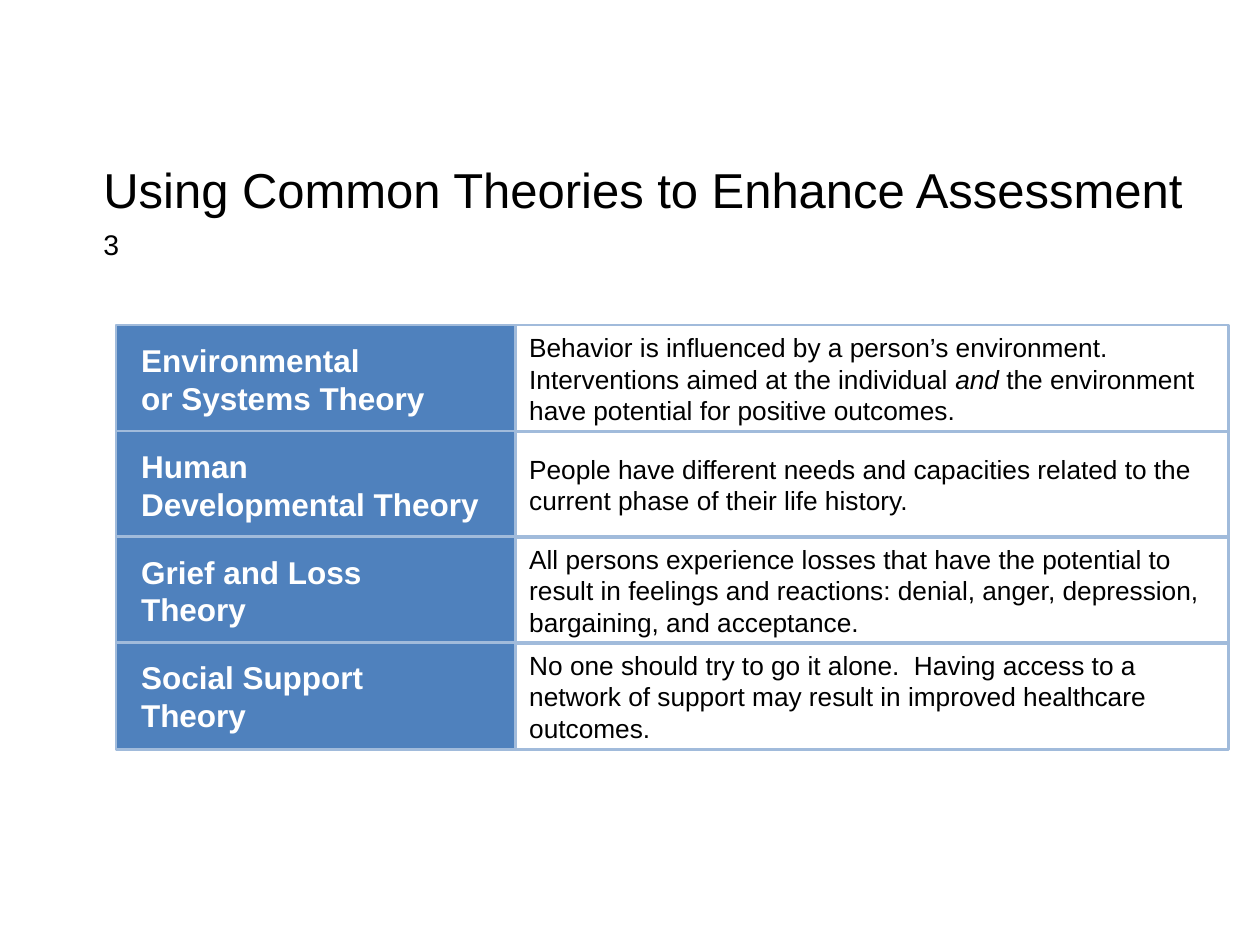
"""Build a slide that pairs four common theories with their meaning for assessment."""
from pptx import Presentation
from pptx.dml.color import RGBColor
from pptx.enum.shapes import MSO_SHAPE
from pptx.enum.text import MSO_ANCHOR, MSO_AUTO_SIZE, PP_ALIGN
from pptx.util import Inches, Pt

RECTANGLE = MSO_SHAPE.RECTANGLE
TOP, MIDDLE = MSO_ANCHOR.TOP, MSO_ANCHOR.MIDDLE
LEFT = PP_ALIGN.LEFT
NO_AUTOFIT = MSO_AUTO_SIZE.NONE
TITLE_ONLY = 5
FIRST_TOP, ROW_PITCH, ROW_HEIGHT = 2.58, 0.84, 0.85

THEORIES = [
    (["Environmental", "or Systems Theory"],
     ["Behavior is influenced by a person’s environment.  Interventions aimed at the individual ",
      "and", " the environment have potential for positive outcomes."]),
    (["Human", "Developmental Theory"],
     ["People have different needs and capacities related to the current phase of their life history."]),
    (["Grief and Loss", "Theory"],
     ["All persons experience losses that have the potential to result in feelings and reactions: "
      "denial, anger, depression, bargaining, and acceptance."]),
    (["Social Support", "Theory"],
     ["No one should try to go it alone.  Having access to a network of support may result in "
      "improved healthcare outcomes."]),
]


def add_text(paragraph, text, size=15, color="000000", bold=False, italic=False):
    run = paragraph.add_run()
    run.text = text
    run.font.name = "Arial"
    run.font.size = Pt(size)
    run.font.bold = bold
    run.font.italic = italic
    run.font.color.rgb = RGBColor.from_string(color)
    paragraph.alignment = LEFT
    return run


def add_box(left, row, width, fill=None):
    shape = slide.shapes.add_shape(RECTANGLE, Inches(left), Inches(FIRST_TOP + row * ROW_PITCH),
                                   Inches(width), Inches(ROW_HEIGHT))
    shape.shadow.inherit = False
    if fill:
        shape.fill.solid()
        shape.fill.fore_color.rgb = RGBColor.from_string(fill)
    else:
        shape.fill.background()
    shape.line.color.rgb = RGBColor.from_string("A1BBDB")
    shape.line.width = Pt(1.5)
    frame = shape.text_frame
    frame.word_wrap = True
    frame.vertical_anchor = MIDDLE
    frame.margin_left, frame.margin_right = Inches(0.2), Inches(0.1)
    frame.margin_top = frame.margin_bottom = Inches(0.05)
    return frame


presentation = Presentation()
presentation.slide_width, presentation.slide_height = Inches(10), Inches(7.5)
slide = presentation.slides.add_slide(presentation.slide_layouts[TITLE_ONLY])

title = slide.shapes.title
title.left, title.top, title.width, title.height = Inches(0.75), Inches(1.17), Inches(8.75), Inches(0.92)
title_frame = title.text_frame
title_frame.word_wrap = True
title_frame.auto_size = NO_AUTOFIT
title_frame.vertical_anchor = TOP
title_frame.margin_left = title_frame.margin_top = Inches(0.07)
title_frame.margin_right = Inches(0.1)
title_paragraph = title_frame.paragraphs[0]
title_paragraph.line_spacing = 1.05
add_text(title_paragraph, "Using Common Theories to Enhance Assessment ", size=28)
superscript = add_text(title_paragraph, "3", size=28)
superscript.font._element.set("baseline", "30000")

for row, (name_lines, description) in enumerate(THEORIES):
    paragraph = add_box(4, row, 5.75).paragraphs[0]
    paragraph.space_after = Pt(12)
    for text in description:
        add_text(paragraph, text, italic=text == "and")

for row, (name_lines, description) in enumerate(THEORIES):
    frame = add_box(0.92, row, 3.17, fill="4F81BD")
    for index, line in enumerate(name_lines):
        paragraph = frame.add_paragraph() if index else frame.paragraphs[0]
        add_text(paragraph, line, size=18, color="FFFFFF", bold=True)

presentation.save("out.pptx")
